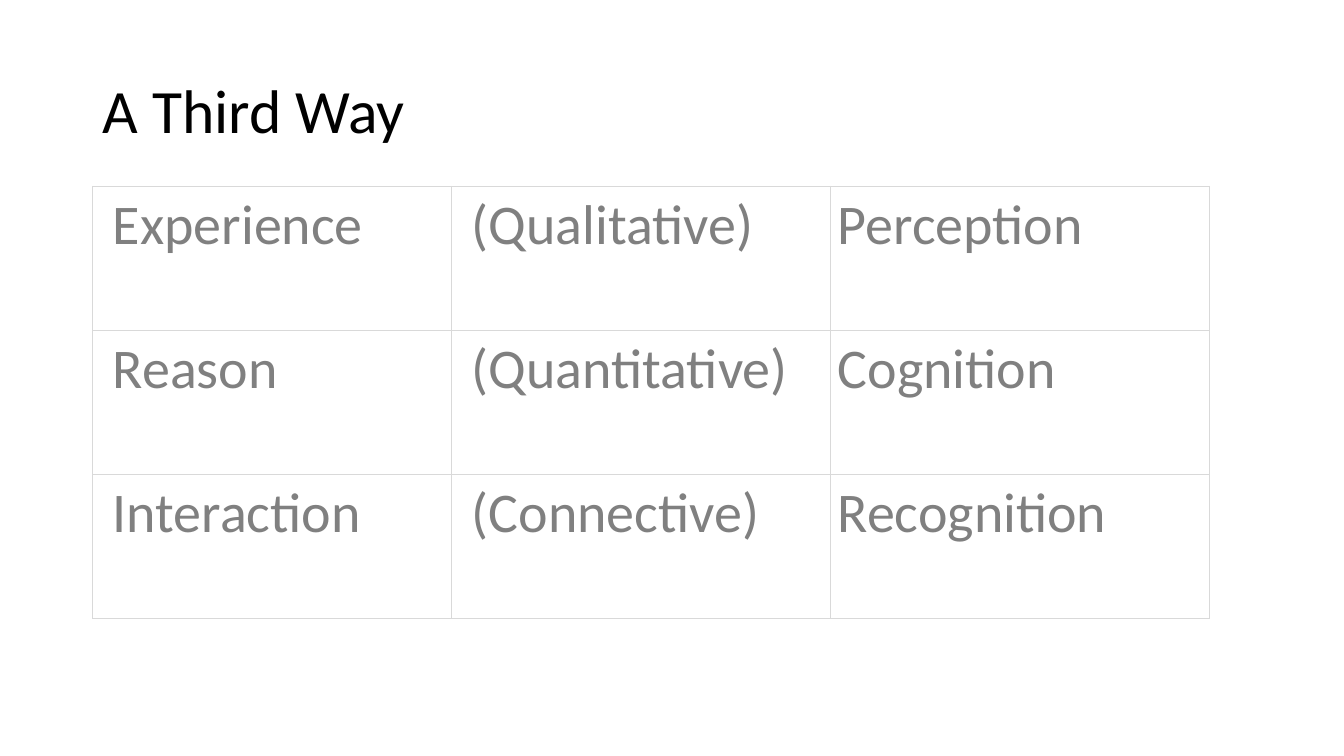
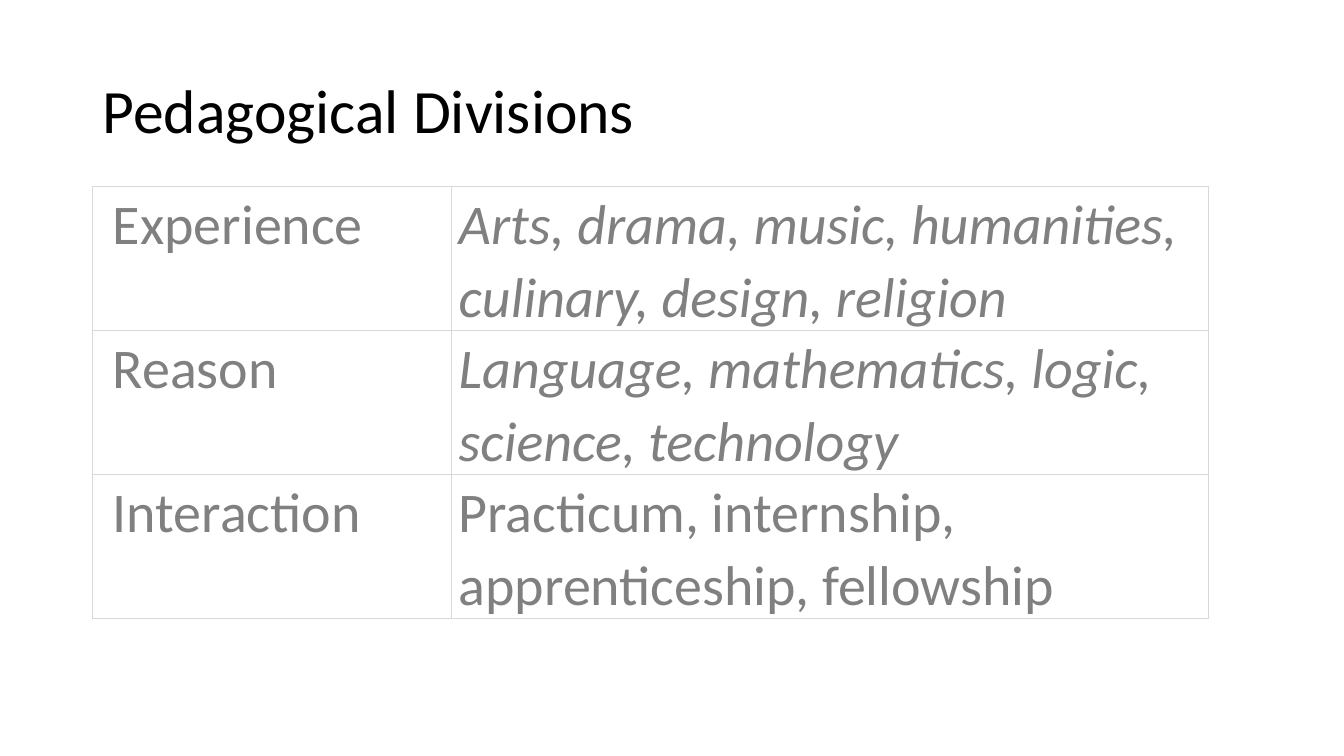
"""Build two slides that set out three ways of knowing in tables."""
from lxml.etree import SubElement
from pptx import Presentation
from pptx.dml.color import RGBColor
from pptx.enum.text import MSO_ANCHOR
from pptx.oxml.ns import qn
from pptx.util import Inches, Pt

FONT = "Calibri"
BLACK, GRAY, RULE = "000000", "808080", "D9D9D9"
LEFT, TITLE_TOP, TITLE_WIDTH, TITLE_HEIGHT = 0.92, 0.4, 11.5, 1.45
TABLE_TOP, ROW_HEIGHT = TITLE_TOP + TITLE_HEIGHT, 1.43
CELL_MARGIN, INDENT = 0.07, 0.13

SLIDES = [
    {
        "title": "A Third Way",
        "widths": [3.56, 3.76, 3.76],
        "indented": {0, 1},
        "italic": set(),
        "rows": [
            ("Experience", "(Qualitative)", "Perception"),
            ("Reason", "(Quantitative)", "Cognition"),
            ("Interaction", "(Connective)", "Recognition"),
        ],
    },
    {
        "title": "Pedagogical Divisions",
        "widths": [3.56, 7.51],
        "indented": {0},
        "italic": {(0, 1), (1, 1)},
        "rows": [
            ("Experience", "Arts, drama, music, humanities, culinary, design, religion"),
            ("Reason", "Language, mathematics, logic, science, technology"),
            ("Interaction", "Practicum, internship, apprenticeship, fellowship"),
        ],
    },
]


def color(value):
    return RGBColor.from_string(value)


def write(frame, text, size, ink, spacing, italic=False):
    para = frame.paragraphs[0]
    para.line_spacing = spacing
    span = para.add_run()
    span.text = text
    span.font.name = FONT
    span.font.size = Pt(size)
    span.font.italic = italic
    span.font.color.rgb = color(ink)


def add_title(page, text):
    box = page.shapes.add_textbox(
        Inches(LEFT), Inches(TITLE_TOP), Inches(TITLE_WIDTH), Inches(TITLE_HEIGHT))
    frame = box.text_frame
    frame.word_wrap = True
    frame.vertical_anchor = MSO_ANCHOR.MIDDLE
    write(frame, text, 44, BLACK, 0.9)


def add_borders(cell):
    properties = cell._tc.get_or_add_tcPr()
    for side in ("lnL", "lnR", "lnT", "lnB"):
        line = SubElement(properties, qn(f"a:{side}"), w=str(Pt(1)))
        fill = SubElement(line, qn("a:solidFill"))
        SubElement(fill, qn("a:srgbClr"), val=RULE)


def add_grid(page, content):
    rows, widths = content["rows"], content["widths"]
    table = page.shapes.add_table(
        len(rows), len(widths), Inches(LEFT), Inches(TABLE_TOP),
        Inches(sum(widths)), Inches(ROW_HEIGHT * len(rows))).table
    table.first_row = table.horz_banding = False
    for column, width in zip(table.columns, widths):
        column.width = Inches(width)
    for row_index, texts in enumerate(rows):
        table.rows[row_index].height = Inches(ROW_HEIGHT)
        for column_index, text in enumerate(texts):
            cell = table.cell(row_index, column_index)
            indent = INDENT if column_index in content["indented"] else 0
            cell.margin_left = Inches(CELL_MARGIN + indent)
            cell.margin_right = Inches(CELL_MARGIN)
            cell.margin_top = cell.margin_bottom = 0
            add_borders(cell)
            cell.fill.background()
            italic = (row_index, column_index) in content["italic"]
            write(cell.text_frame, text, 40, GRAY, 1.07, italic)


def main():
    deck = Presentation()
    deck.slide_width, deck.slide_height = Inches(13.33), Inches(7.5)
    for content in SLIDES:
        page = deck.slides.add_slide(deck.slide_layouts[6])
        add_title(page, content["title"])
        add_grid(page, content)
    deck.save("out.pptx")


if __name__ == "__main__":
    main()
